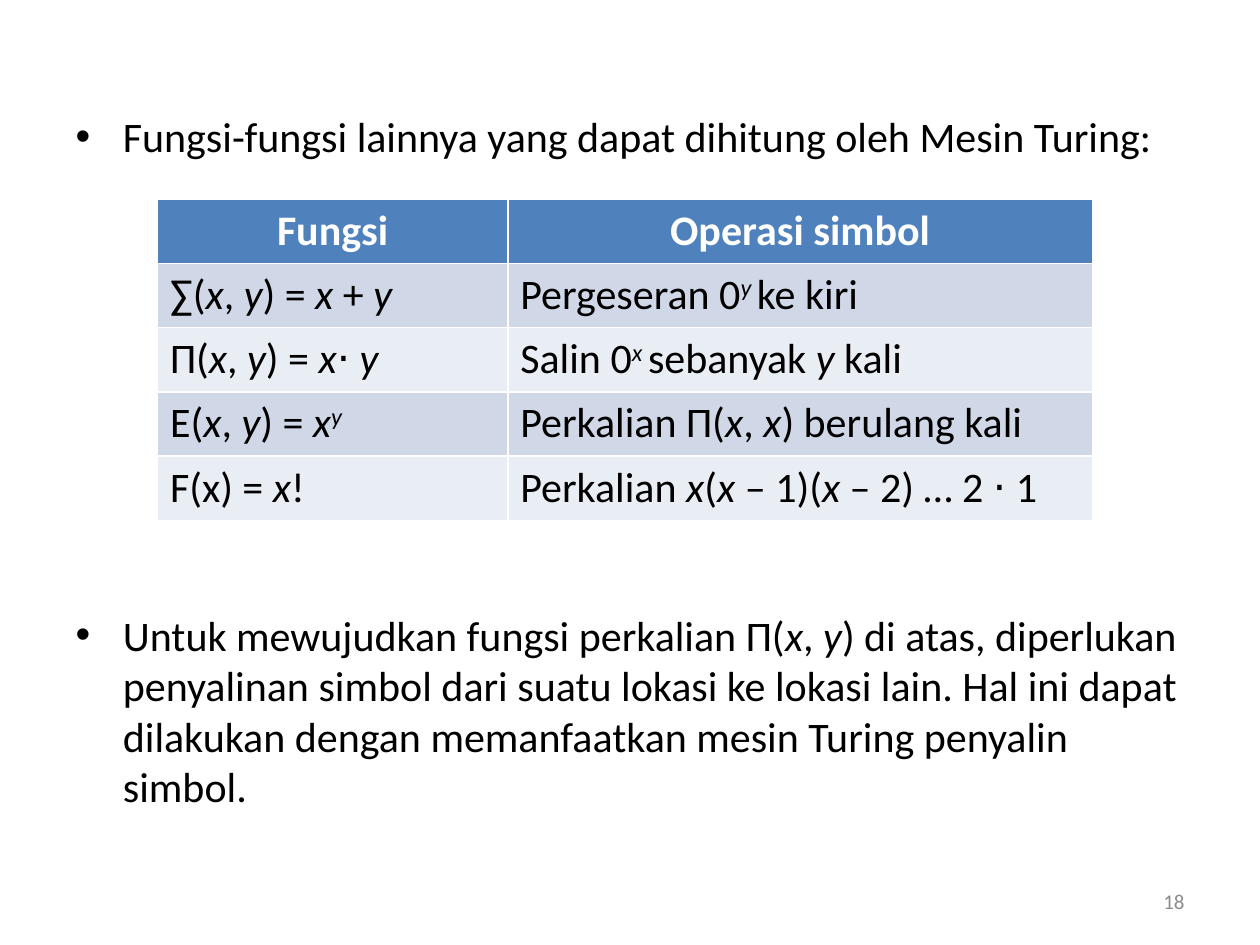
"""Build a slide listing functions that a Turing machine can compute."""
from pptx import Presentation
from pptx.dml.color import RGBColor
from pptx.enum.text import MSO_ANCHOR, MSO_AUTO_SIZE, PP_ALIGN
from pptx.util import Inches, Pt

COLORS = {"text": "000000", "header_text": "FFFFFF", "number": "8C8C8C",
          "header": "4F81BD", "odd": "D0D8E8", "even": "E9EDF4"}
FONT = "Calibri"
TEXT_SIZE = 24
TABLE_GAP = 256

# Text between asterisks is italic; a leading caret raises it.
BULLETS = [
    "Fungsi-fungsi lainnya yang dapat dihitung oleh Mesin Turing:",
    "Untuk mewujudkan fungsi perkalian Π(*x*, *y*) di atas, diperlukan penyalinan "
    "simbol dari suatu lokasi ke lokasi lain. Hal ini dapat dilakukan dengan "
    "memanfaatkan mesin Turing penyalin simbol.",
]
ROWS = [
    ("Fungsi", "Operasi simbol"),
    ("∑(*x*, *y*) = *x* + *y*", "Pergeseran 0*^y *ke kiri"),
    ("Π(*x*, *y*) = *x⋅ y*", "Salin 0*^x *sebanyak *y* kali"),
    ("E(*x*, *y*) = *x**^y*", "Perkalian Π(*x*, *x*) berulang kali"),
    ("F(x) = *x*!", "Perkalian *x*(*x* – 1)(*x* – 2) … 2 ⋅ 1"),
]
COLUMN_WIDTHS = (2.78, 4.64)
ROW_HEIGHT = 0.51
SLIDE_NUMBER = "18"


def write(paragraph, marked_text, color="text", size=TEXT_SIZE):
    for index, part in enumerate(marked_text.split("*")):
        if not part:
            continue
        run = paragraph.add_run()
        run.text = part.lstrip("^")
        if index % 2:
            run.font.italic = True
        if part.startswith("^"):
            run.font._element.set("baseline", "30000")
    paragraph.font.name = FONT
    paragraph.font.size = Pt(size)
    paragraph.font.color.rgb = RGBColor.from_string(COLORS[color])


def place(shape, left, top, width, height):
    shape.left, shape.top = Inches(left), Inches(top)
    shape.width, shape.height = Inches(width), Inches(height)


def add_bullets(slide):
    body = slide.placeholders[1]
    place(body, 0.5, 0.83, 9, 6.17)
    frame = body.text_frame
    frame.auto_size = MSO_AUTO_SIZE.NONE
    for index, text in enumerate(BULLETS):
        paragraph = frame.add_paragraph() if index else frame.paragraphs[0]
        paragraph.space_before = Pt(TABLE_GAP if index else 0)
        write(paragraph, text)


def add_function_table(slide):
    table = slide.shapes.add_table(
        len(ROWS), len(COLUMN_WIDTHS), Inches(1.25), Inches(1.58),
        Inches(sum(COLUMN_WIDTHS)), Inches(ROW_HEIGHT * len(ROWS))).table
    for column, width in zip(table.columns, COLUMN_WIDTHS):
        column.width = Inches(width)
    for row_index, row in enumerate(ROWS):
        fill = "header" if row_index == 0 else "odd" if row_index % 2 else "even"
        for column_index, text in enumerate(row):
            cell = table.cell(row_index, column_index)
            cell.fill.solid()
            cell.fill.fore_color.rgb = RGBColor.from_string(COLORS[fill])
            paragraph = cell.text_frame.paragraphs[0]
            write(paragraph, text, "text" if row_index else "header_text")
            paragraph.font.bold = row_index == 0
            if row_index == 0:
                paragraph.alignment = PP_ALIGN.CENTER


def add_slide_number(slide):
    box = slide.shapes.add_textbox(Inches(7.17), Inches(6.95), Inches(2.33), Inches(0.4))
    frame = box.text_frame
    frame.word_wrap = True
    frame.vertical_anchor = MSO_ANCHOR.MIDDLE
    paragraph = frame.paragraphs[0]
    paragraph.alignment = PP_ALIGN.RIGHT
    write(paragraph, SLIDE_NUMBER, "number", 12)


def main():
    presentation = Presentation()
    presentation.slide_width, presentation.slide_height = Inches(10), Inches(7.5)
    slide = presentation.slides.add_slide(presentation.slide_layouts[1])
    title = slide.shapes.title._element
    title.getparent().remove(title)
    add_bullets(slide)
    add_slide_number(slide)
    add_function_table(slide)
    presentation.save("out.pptx")


if __name__ == "__main__":
    main()
